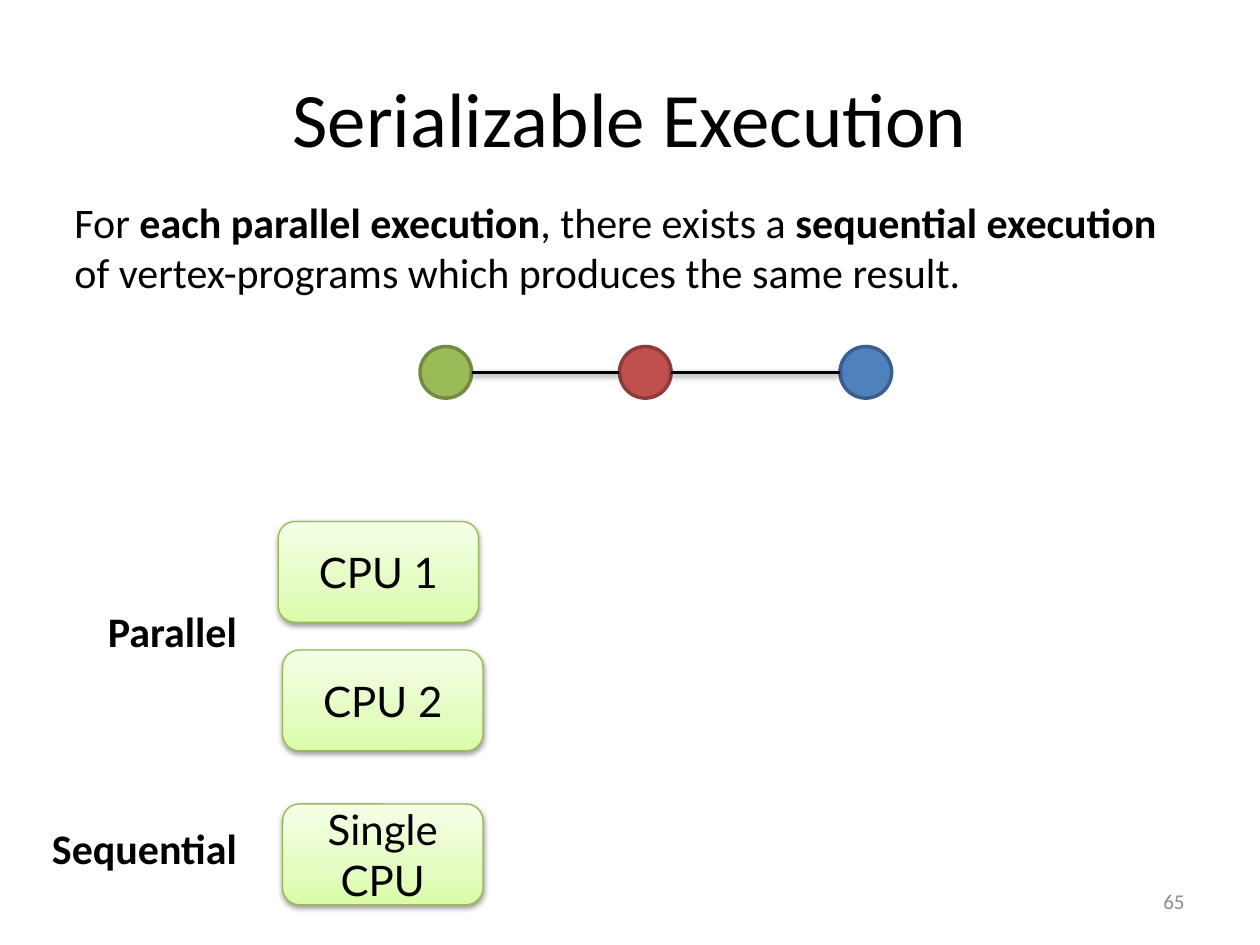
from copy import deepcopy

from pptx import Presentation
from pptx.dml.color import RGBColor
from pptx.enum.shapes import MSO_CONNECTOR as CONNECTOR, MSO_SHAPE as SHAPE
from pptx.enum.text import MSO_ANCHOR as ANCHOR, PP_ALIGN as ALIGN
from pptx.oxml import parse_xml
from pptx.util import Pt

COLORS = {
    "black": "000000", "gray": "8C8C8C", "box_line": "98B955",
    "green": "9BBB59", "green_line": "738A42",
    "red": "C0504D", "red_line": "8E3B39",
    "blue": "4F81BD", "blue_line": "3A5F8C",
}
BOX_STOPS = [(0, "DAFDA7"), (0.35, "E4FCC2"), (1, "F5FFE7")]
SHADOW = (
    '<a:effectLst xmlns:a="http://schemas.openxmlformats.org/drawingml/2006/main">'
    '<a:outerShdw blurRad="40000" dist="20000" dir="5400000" rotWithShape="0">'
    '<a:srgbClr val="000000"><a:alpha val="38000"/></a:srgbClr>'
    '</a:outerShdw></a:effectLst>'
)


def color(name):
    return RGBColor.from_string(COLORS[name])


def add_run(paragraph, text, size, bold=False, name="Calibri", ink="black"):
    run = paragraph.add_run()
    run.text = text
    run.font.size = Pt(size)
    run.font.bold = bold
    run.font.name = name
    run.font.color.rgb = color(ink)


presentation = Presentation()
presentation.slide_width = Pt(720)
presentation.slide_height = Pt(540)
slide = presentation.slides.add_slide(presentation.slide_layouts[5])
shapes = slide.shapes

title = shapes.title
title.left, title.top, title.width, title.height = Pt(36), Pt(21.6), Pt(648), Pt(90)
title.text_frame.vertical_anchor = ANCHOR.MIDDLE
title.text_frame.paragraphs[0].alignment = ALIGN.CENTER
add_run(title.text_frame.paragraphs[0], "Serializable Execution", 44)

statement = shapes.add_textbox(Pt(35.5), Pt(108.7), Pt(648), Pt(65.4))
statement.text_frame.word_wrap = True
for text, bold in [
    ("For ", False),
    ("each parallel execution", True),
    (", there exists a ", False),
    ("sequential execution ", True),
    ("of vertex-programs which produces the same result.", False),
]:
    add_run(statement.text_frame.paragraphs[0], text, 24, bold)

for left, top, lines in [
    (159, 298, ["CPU 1"]),
    (161.5, 371.5, ["CPU 2"]),
    (161.5, 459.4, ["Single", "CPU"]),
]:
    box = shapes.add_shape(SHAPE.ROUNDED_RECTANGLE, Pt(left), Pt(top), Pt(114.5), Pt(57.6))
    box.fill.gradient()
    box.fill.gradient_angle = 90
    stop_list = box._element.spPr.gradFill.gsLst
    stop_list.insert(1, deepcopy(stop_list[0]))
    for stop, (position, hex_color) in zip(box.fill.gradient_stops, BOX_STOPS):
        stop.position = position
        stop.color.rgb = RGBColor.from_string(hex_color)
    box.line.color.rgb = color("box_line")
    box.line.width = Pt(0.75)
    box._element.spPr.append(parse_xml(SHADOW))
    frame = box.text_frame
    frame.word_wrap = False
    frame.vertical_anchor = ANCHOR.MIDDLE
    for index, line in enumerate(lines):
        paragraph = frame.add_paragraph() if index else frame.paragraphs[0]
        paragraph.alignment = ALIGN.CENTER
        add_run(paragraph, line, 24, name="Lato")

for text, left, top, width in [("Parallel", 52.5, 342.7, 90), ("Sequential", 21, 466.6, 121.5)]:
    label = shapes.add_textbox(Pt(left), Pt(top), Pt(width), Pt(36))
    label.text_frame.word_wrap = False
    label.text_frame.paragraphs[0].alignment = ALIGN.RIGHT
    add_run(label.text_frame.paragraphs[0], text, 24, True)

DIAMETER, VERTEX_TOP = 29.5, 198
vertices = [("green", 240), ("red", 354), ("blue", 480)]
for name, left in vertices:
    vertex = shapes.add_shape(SHAPE.OVAL, Pt(left), Pt(VERTEX_TOP), Pt(DIAMETER), Pt(DIAMETER))
    vertex.shadow.inherit = False
    vertex.fill.solid()
    vertex.fill.fore_color.rgb = color(name)
    vertex.line.color.rgb = color(name + "_line")
    vertex.line.width = Pt(2)

middle = Pt(VERTEX_TOP + DIAMETER / 2)
for (_, start), (_, end) in zip(vertices, vertices[1:]):
    edge = shapes.add_connector(CONNECTOR.STRAIGHT, Pt(start + DIAMETER), middle, Pt(end), middle)
    edge.line.color.rgb = color("black")
    edge.line.width = Pt(2)
    edge._element.spPr.append(parse_xml(SHADOW))

number = shapes.add_textbox(Pt(516), Pt(500.5), Pt(168), Pt(28.75))
number.text_frame.word_wrap = True
number.text_frame.vertical_anchor = ANCHOR.MIDDLE
number.text_frame.paragraphs[0].alignment = ALIGN.RIGHT
add_run(number.text_frame.paragraphs[0], "65", 12, ink="gray")

presentation.save("out.pptx")
